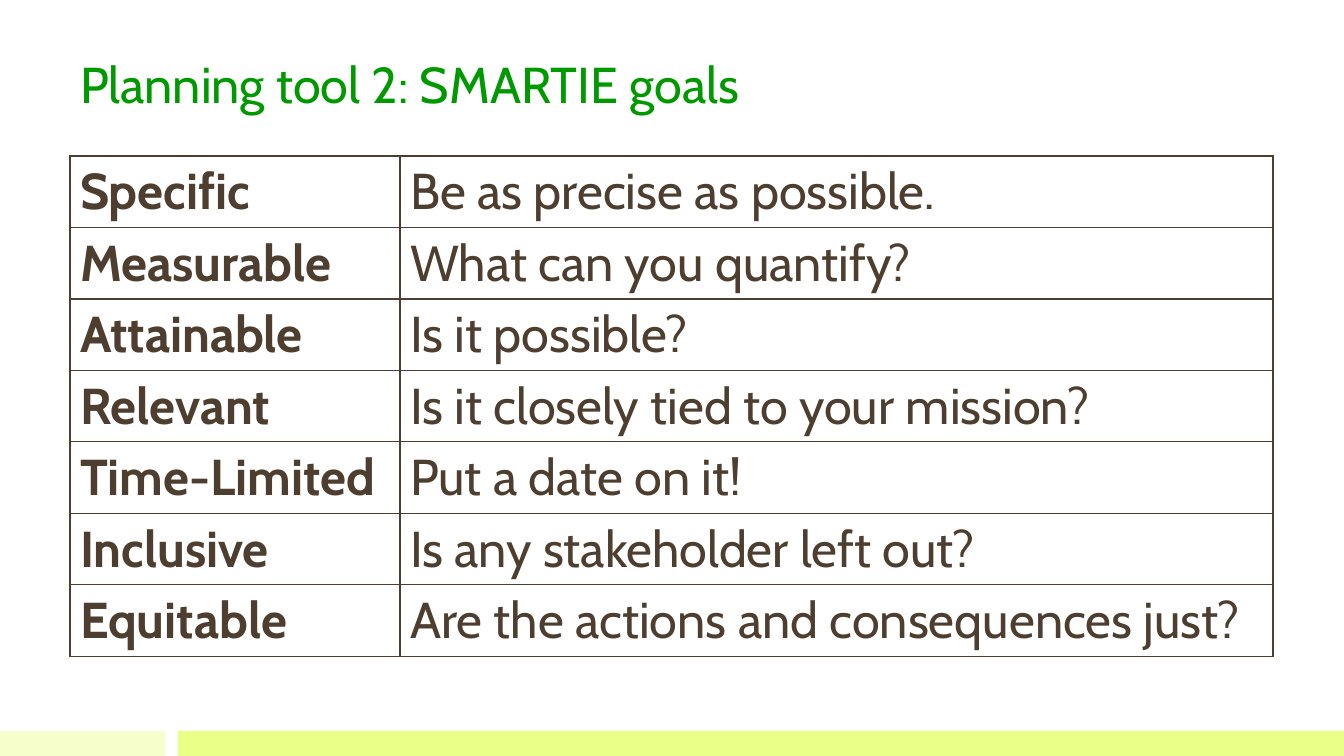
"""Builds the SMARTIE goals slide with a title, a two-column table and a footer band."""
from lxml import etree
from pptx import Presentation
from pptx.dml.color import RGBColor
from pptx.enum.shapes import MSO_SHAPE
from pptx.enum.text import MSO_ANCHOR, PP_ALIGN
from pptx.oxml.ns import qn
from pptx.util import Pt

RECTANGLE = MSO_SHAPE.RECTANGLE
BOTTOM = MSO_ANCHOR.BOTTOM
LEFT = PP_ALIGN.LEFT

EMU_PER_PX = 914400 / 100.8
SLIDE_WIDTH, SLIDE_HEIGHT = 1344, 756
MARGIN = 70
TITLE_ONLY_LAYOUT = 5
FONT = "Cabin"
FONT_SIZE = 36
COLORS = {
    "title": "009900",
    "text": "4D3E2F",
    "pale_band": "F6FFCC",
    "bright_band": "E9FF88",
}

GOALS = [
    ("Specific", "Be as precise as possible."),
    ("Measurable", "What can you quantify?"),
    ("Attainable", "Is it possible?"),
    ("Relevant", "Is it closely tied to your mission?"),
    ("Time-Limited", "Put a date on it!"),
    ("Inclusive", "Is any stakeholder left out?"),
    ("Equitable", "Are the actions and consequences just?"),
]
COLUMN_WIDTHS = (330, 873)
ROW_HEIGHT = 71


def px(length):
    return round(length * EMU_PER_PX)


def color(name):
    return RGBColor.from_string(COLORS[name])


def style_font(paragraph, color_name, bold=False):
    font = paragraph.font
    font.name = FONT
    font.size = Pt(FONT_SIZE)
    font.bold = bold
    font.color.rgb = color(color_name)


def add_band(slide, left, width, color_name):
    height = 25
    band = slide.shapes.add_shape(
        RECTANGLE, px(left), px(SLIDE_HEIGHT - height), px(width), px(height))
    band.shadow.inherit = False
    band.fill.solid()
    band.fill.fore_color.rgb = color(color_name)
    band.line.fill.background()


def set_title(slide, text):
    title = slide.shapes.title
    title.left, title.top = px(MARGIN), px(25)
    title.width, title.height = px(1132), px(94)
    frame = title.text_frame
    frame.text = text
    frame.vertical_anchor = BOTTOM
    paragraph = frame.paragraphs[0]
    paragraph.alignment = LEFT
    style_font(paragraph, "title")


def add_borders(cell):
    properties = cell._tc.get_or_add_tcPr()
    for position, side in enumerate(("lnL", "lnR", "lnT", "lnB")):
        line = etree.Element(qn(f"a:{side}"), w=str(Pt(1)))
        fill = etree.SubElement(line, qn("a:solidFill"))
        etree.SubElement(fill, qn("a:srgbClr"), val=COLORS["text"])
        properties.insert(position, line)


def fill_cell(cell, text, bold):
    cell.text = text
    cell.fill.background()
    style_font(cell.text_frame.paragraphs[0], "text", bold)
    add_borders(cell)


def add_goal_table(slide):
    table = slide.shapes.add_table(
        len(GOALS), len(COLUMN_WIDTHS), px(MARGIN), px(156),
        px(sum(COLUMN_WIDTHS)), px(ROW_HEIGHT * len(GOALS))).table
    table.first_row = False
    table.horz_banding = False
    for column, width in zip(table.columns, COLUMN_WIDTHS):
        column.width = px(width)
    for row, texts in zip(table.rows, GOALS):
        row.height = px(ROW_HEIGHT)
        for index, text in enumerate(texts):
            fill_cell(row.cells[index], text, bold=index == 0)


def main():
    presentation = Presentation()
    presentation.slide_width = px(SLIDE_WIDTH)
    presentation.slide_height = px(SLIDE_HEIGHT)
    slide = presentation.slides.add_slide(
        presentation.slide_layouts[TITLE_ONLY_LAYOUT])
    add_band(slide, 0, 165, "pale_band")
    add_band(slide, 178, SLIDE_WIDTH - 178, "bright_band")
    set_title(slide, "Planning tool 2: SMARTIE goals")
    add_goal_table(slide)
    presentation.save("out.pptx")


if __name__ == "__main__":
    main()
